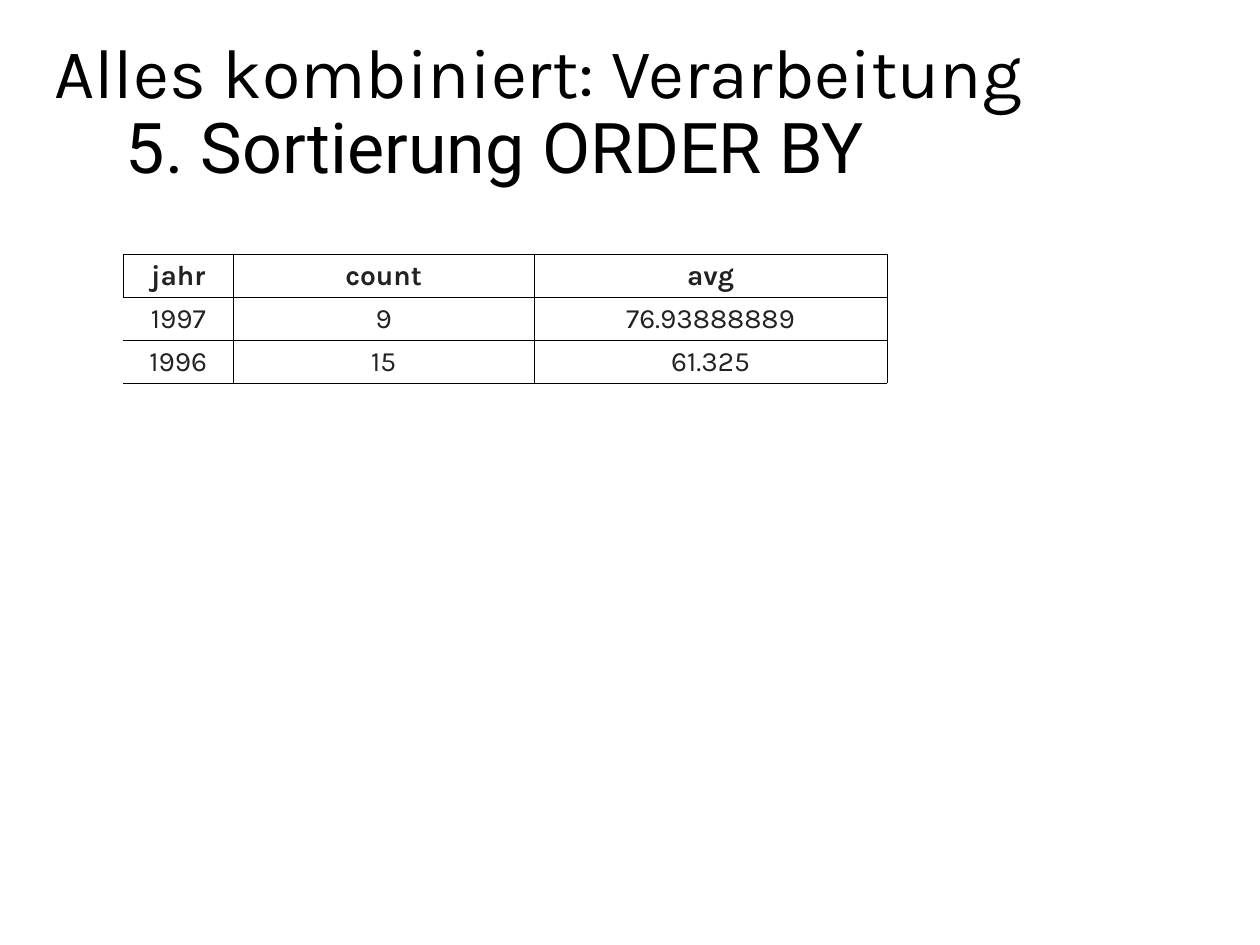
import pptx
import pptx.dml.color
import pptx.enum.text
import pptx.oxml.ns
import pptx.util
from lxml import etree

Inches, Pt = pptx.util.Inches, pptx.util.Pt
BLACK = pptx.dml.color.RGBColor(0x00, 0x00, 0x00)
DARK_GRAY = pptx.dml.color.RGBColor(0x22, 0x22, 0x22)
MIDDLE = pptx.enum.text.MSO_ANCHOR.MIDDLE
CENTER = pptx.enum.text.PP_ALIGN.CENTER

TITLE_LINES = [("Alles kombiniert: Verarbeitung", "Karla"),
               ("5. Sortierung ORDER BY", "Roboto")]
RESULT_ROWS = [("jahr", "count", "avg"),
               ("1997", "9", "76.93888889"),
               ("1996", "15", "61.325")]
COLUMN_WIDTHS = [0.87, 2.39, 2.8]
ROW_HEIGHT = 0.34


def add_span(para, text, font, size, color, bold=False):
    span = para.add_run()
    span.text = text
    span.font.name = font
    span.font.size = Pt(size)
    span.font.bold = bold
    span.font.color.rgb = color


def set_borders(cell, hidden_sides):
    """Draw thin black lines on all sides of the cell but the hidden ones."""
    qn = pptx.oxml.ns.qn
    properties = cell._tc.get_or_add_tcPr()
    for side in "LRTB":
        line = etree.SubElement(properties, qn(f"a:ln{side}"))
        if side in hidden_sides:
            line.set("w", "0")
            etree.SubElement(line, qn("a:noFill"))
        else:
            line.set("w", str(Pt(0.5)))
            fill = etree.SubElement(line, qn("a:solidFill"))
            etree.SubElement(fill, qn("a:srgbClr"), val=str(BLACK))


def add_title(page):
    box = page.shapes.add_textbox(Inches(0.43), Inches(0.3), Inches(9.37), Inches(1.2))
    frame = box.text_frame
    frame.word_wrap = True
    frame.vertical_anchor = MIDDLE
    frame.margin_left = 0
    para = frame.paragraphs[0]
    para.line_spacing = 0.9
    indent = Inches(0.57)
    paragraph_properties = para._p.get_or_add_pPr()
    paragraph_properties.set("marL", str(indent))
    paragraph_properties.set("indent", str(-indent))
    for number, (text, font) in enumerate(TITLE_LINES):
        if number:
            para.add_line_break()
        add_span(para, text, font, 40, BLACK)


def add_result_table(page):
    table = page.shapes.add_table(
        len(RESULT_ROWS), len(COLUMN_WIDTHS), Inches(0.98), Inches(2.02),
        Inches(sum(COLUMN_WIDTHS)), Inches(ROW_HEIGHT * len(RESULT_ROWS))).table
    table.horz_banding = False
    for column, width in zip(table.columns, COLUMN_WIDTHS):
        column.width = Inches(width)
    for row_index, values in enumerate(RESULT_ROWS):
        table.rows[row_index].height = Inches(ROW_HEIGHT)
        is_header = row_index == 0
        for column_index, value in enumerate(values):
            cell = table.cell(row_index, column_index)
            cell.margin_left = cell.margin_right = cell.margin_top = Inches(0.01)
            cell.margin_bottom = 0
            cell.vertical_anchor = MIDDLE
            open_left = column_index == 0 and not is_header
            set_borders(cell, "L" if open_left else "")
            cell.fill.background()
            para = cell.text_frame.paragraphs[0]
            para.alignment = CENTER
            add_span(para, value, "Karla", 16, DARK_GRAY, is_header)


def main():
    deck = pptx.Presentation()
    deck.slide_width, deck.slide_height = Inches(10), Inches(7.5)
    page = deck.slides.add_slide(deck.slide_layouts[6])
    add_title(page)
    add_result_table(page)
    deck.save("out.pptx")


if __name__ == "__main__":
    main()
